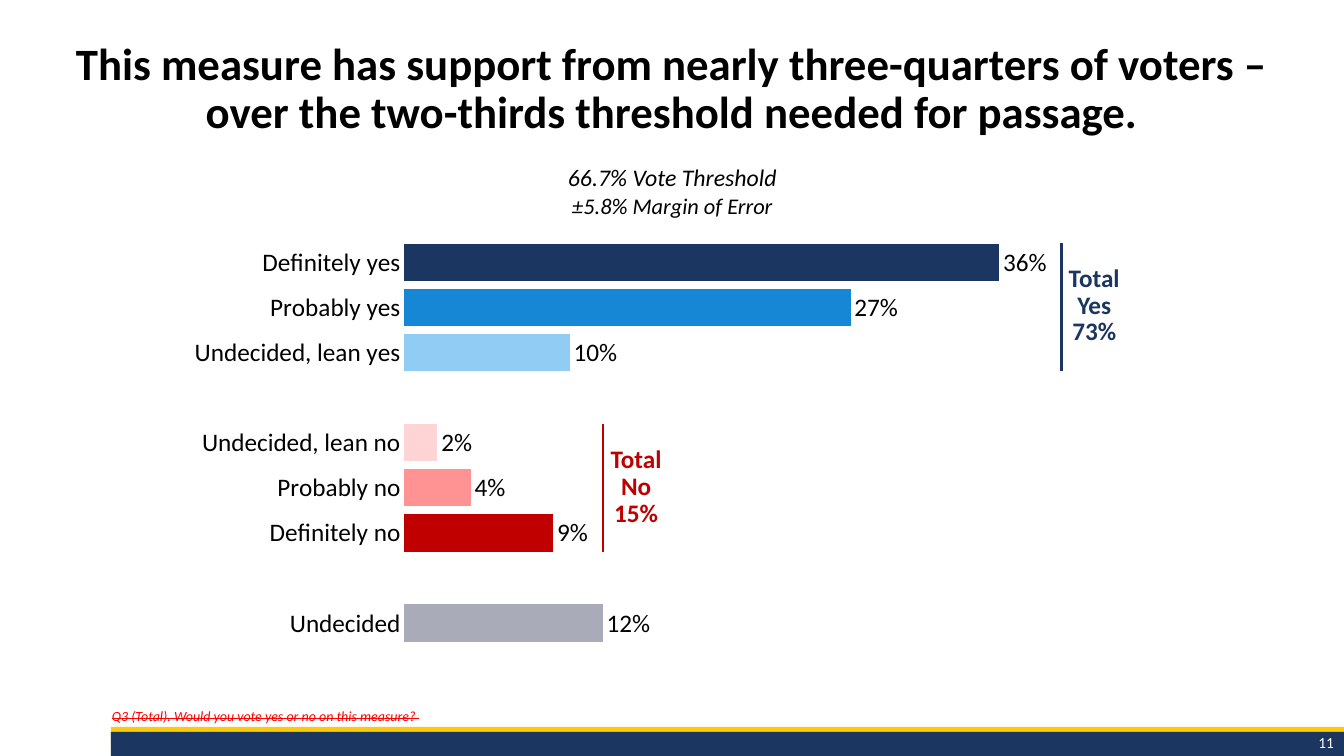
from lxml import etree
from pptx import Presentation
from pptx import util as u
from pptx.chart.data import CategoryChartData
from pptx.dml.color import RGBColor
from pptx.enum import chart as charts, shapes, text
from pptx.oxml import parse_xml
from pptx.oxml.ns import nsdecls, qn

WIDTH, HEIGHT = u.Inches(13.333), u.Inches(7.5)
NAVY, RED, BLACK, WHITE = "1B3660", "C00000", "000000", "FFFFFF"
ANSWERS = [
    ("Definitely yes", 0.36, NAVY),
    ("Probably yes", 0.27, "1587D4"),
    ("Undecided, lean yes", 0.10, "91CCF4"),
    ("", None, None),
    ("Undecided, lean no", 0.02, "FFD4D4"),
    ("Probably no", 0.04, "FF9393"),
    ("Definitely no", 0.09, RED),
    ("", None, None),
    ("Undecided", 0.12, "A9ABB8"),
]
PLOT_AREA = {"x": 0.233, "y": 0.035, "w": 0.721, "h": 0.879}


def color(code):
    """Turn a hex string into a colour."""
    return RGBColor.from_string(code)


def area(left, top, width, height):
    """Turn percentages of the slide size into lengths."""
    return [int(share * side / 100) for share, side in
            zip((left, top, width, height), (WIDTH, HEIGHT) * 2)]


def assign(target, values):
    """Set every attribute named in a dict."""
    for name, value in values.items():
        setattr(target, name, value)


def style(font, size, code=BLACK, **extra):
    """Format a font."""
    assign(font, {"name": "Calibri", "size": u.Pt(size), **extra})
    font.color.rgb = color(code)


def write(frame, lines, align, anchor=text.MSO_ANCHOR.TOP, code=BLACK, spacing=None, **extra):
    """Fill a text frame with (words, size) paragraphs."""
    assign(frame, {"word_wrap": True, "vertical_anchor": anchor,
                   "auto_size": text.MSO_AUTO_SIZE.NONE})
    for index, (words, size) in enumerate(lines):
        para = frame.add_paragraph() if index else frame.paragraphs[0]
        para.text = words
        assign(para, {"alignment": align, "line_spacing": spacing, "space_before": u.Pt(0)})
        for span in para.runs:
            style(span.font, size, code, **extra)


def add_text(page, place, *args, **extra):
    """Add a text box and return its frame."""
    frame = page.shapes.add_textbox(*area(*place)).text_frame
    write(frame, *args, **extra)
    return frame


def add_title(page, words):
    """Place and format the title placeholder."""
    title = page.shapes.title
    assign(title, dict(zip(("left", "top", "width", "height"), area(2.48, 4.53, 95.03, 14.8))))
    write(title.text_frame, [(words, 32)], text.PP_ALIGN.CENTER, text.MSO_ANCHOR.MIDDLE,
          spacing=0.9, bold=True)


def add_band(page, top, height, code):
    """Add one footer band."""
    band = page.shapes.add_shape(shapes.MSO_SHAPE.RECTANGLE, *area(8.25, top, 91.75, height))
    band.shadow.inherit = False
    band.fill.solid()
    band.fill.fore_color.rgb = color(code)
    band.line.fill.background()


def add_total(page, left, top, width, words, code):
    """Add a vertical rule with a total beside it."""
    x, start, _, length = area(left, top, 0, 16.94)
    rule = page.shapes.add_connector(shapes.MSO_CONNECTOR.STRAIGHT, x, start, x, start + length)
    rule.line.color.rgb = color(code)
    rule.line.width = u.Pt(1.5)
    etree.SubElement(rule._element.spPr, qn("a:effectLst"))
    center = left + 2.65 + 2.5 - 2.65 / 1000
    add_text(page, (left - (1.27 if width < 8 else 1.65), top + 2.4, width, 12),
             [(words, 18)], text.PP_ALIGN.CENTER, code=code, spacing=u.Pt(19), bold=True)


def add_answers(page):
    """Add the bar chart of answers."""
    data = CategoryChartData(number_format="0%")
    data.categories = [label for label, _, _ in ANSWERS]
    data.add_series("Series 1", [value for _, value, _ in ANSWERS])
    chart = page.shapes.add_chart(charts.XL_CHART_TYPE.BAR_CLUSTERED,
                                  *area(12.22, 29.6, 76.73, 61.07), data).chart
    assign(chart, {"has_legend": False, "has_title": False})
    style(chart.font, 10)
    none = charts.XL_TICK_MARK.NONE
    names, scale = chart.category_axis, chart.value_axis
    assign(names, {"reverse_order": True, "major_tick_mark": none, "minor_tick_mark": none,
                   "has_major_gridlines": False})
    names.format.line.fill.background()
    style(names.tick_labels.font, 18)
    assign(scale, {"visible": False, "has_major_gridlines": False, "minimum_scale": 0,
                   "maximum_scale": 0.45, "major_unit": 0.15})
    assign(scale.tick_labels, {"number_format": "0%", "number_format_is_linked": False})
    plot = chart.plots[0]
    assign(plot, {"gap_width": 21, "vary_by_categories": False, "has_data_labels": True})
    assign(plot.data_labels, {"show_value": True, "number_format": "0%",
                              "number_format_is_linked": False,
                              "position": charts.XL_LABEL_POSITION.OUTSIDE_END})
    style(plot.data_labels.font, 18)
    series = plot.series[0]
    series.invert_if_negative = False
    for index, (_, _, code) in enumerate(ANSWERS):
        if code:
            fill = series.points[index].format.fill
            fill.solid()
            fill.fore_color.rgb = color(code)
    fix_plot_area(chart)


def fix_plot_area(chart):
    """Give the inner plot area its place in the chart."""
    modes = "".join(f'<c:{side}Mode val="edge"/>' for side in "xy")
    sizes = "".join(f'<c:{side} val="{share}"/>' for side, share in PLOT_AREA.items())
    layout = parse_xml(f'<c:layout {nsdecls("c")}><c:manualLayout><c:layoutTarget val="inner"/>'
                       f'{modes}{sizes}</c:manualLayout></c:layout>')
    plot_area = chart._chartSpace.chart.plotArea
    for old in plot_area.findall(qn("c:layout")):
        plot_area.remove(old)
    plot_area.insert(0, layout)


def main():
    """Build the slide."""
    deck = Presentation()
    assign(deck, {"slide_width": WIDTH, "slide_height": HEIGHT})
    page = deck.slides.add_slide(deck.slide_layouts[5])
    align, anchor = text.PP_ALIGN, text.MSO_ANCHOR
    add_band(page, 96.13, 2.67, "FCCA09")
    add_band(page, 96.8, 3.2, "1B3661")
    add_text(page, (85.2, 96.4, 14.8, 3.6), [("11", 11)], align.RIGHT, anchor.MIDDLE, code=WHITE)
    source = add_text(page, (7.58, 89.33, 92.42, 7.2),
                      [("Q3 (Total). Would you vote yes or no on this measure? ", 10)],
                      align.LEFT, anchor.BOTTOM, code="FF0000", spacing=0.9, italic=True)
    source.paragraphs[0].runs[0]._r.get_or_add_rPr().set("strike", "sngStrike")
    add_answers(page)
    add_total(page, 44.85, 56.13, 7.5, "Total No\v15%", RED)
    add_total(page, 78.98, 32.13, 8.18, "Total Yes\v73%", NAVY)
    add_title(page, "This measure has support from nearly three-quarters of voters –\v"
                    "over the two-thirds threshold needed for passage.")
    add_text(page, (24.98, 20.93, 50.1, 8.8),
             [("66.7% Vote Threshold", 17), ("±5.8% Margin of Error", 16)],
             align.CENTER, italic=True)
    deck.save("out.pptx")


if __name__ == "__main__":
    main()
